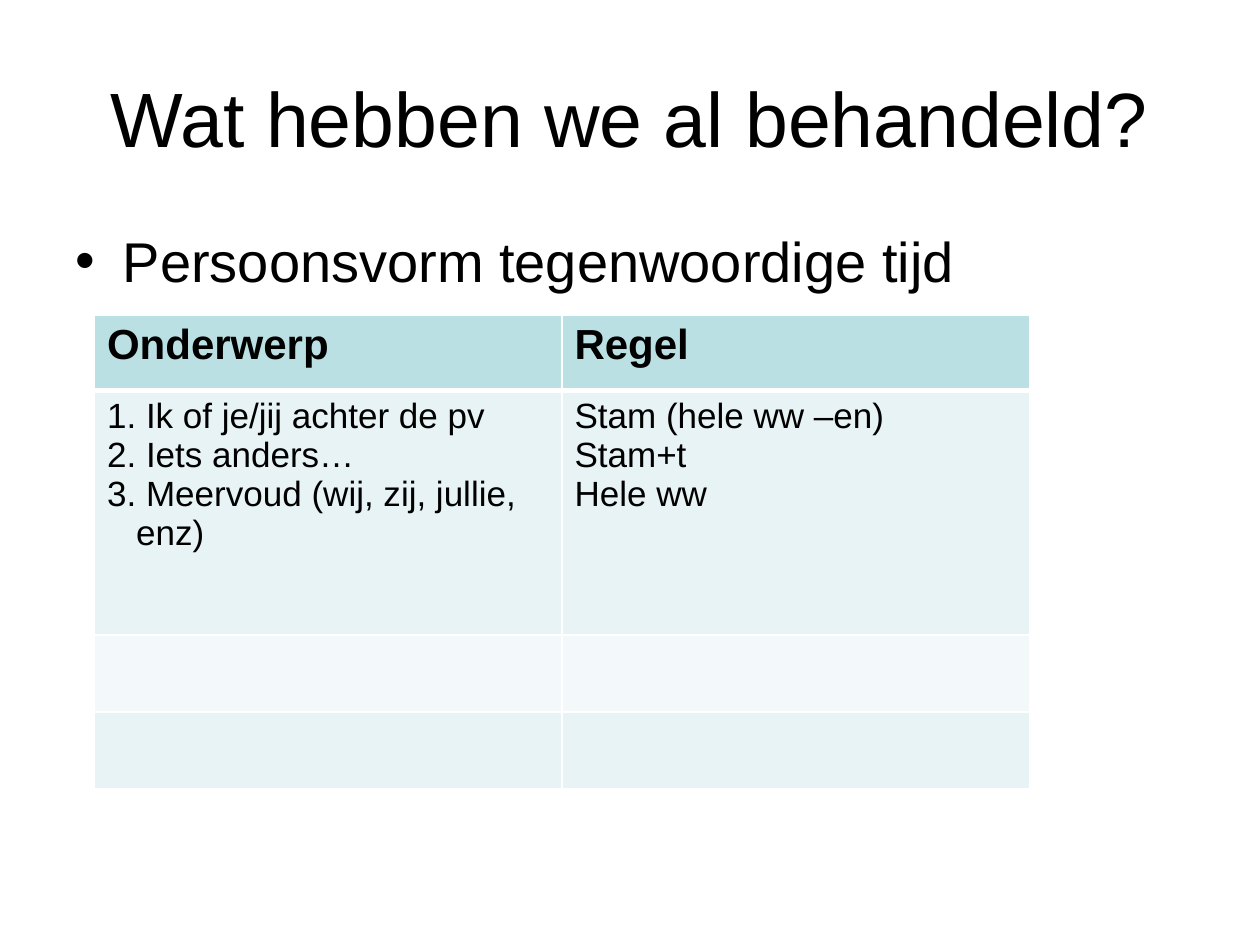
from dataclasses import dataclass

from lxml import etree
from pptx import Presentation
from pptx.dml.color import RGBColor
from pptx.enum.text import MSO_ANCHOR, MSO_AUTO_SIZE, PP_ALIGN
from pptx.oxml.ns import qn
from pptx.util import Inches, Pt

CENTER, LEFT = PP_ALIGN.CENTER, PP_ALIGN.LEFT
MIDDLE, TOP = MSO_ANCHOR.MIDDLE, MSO_ANCHOR.TOP
NO_AUTOFIT = MSO_AUTO_SIZE.NONE


@dataclass(frozen=True)
class Theme:
    font: str = "Arial"
    ink: str = "000000"
    border: str = "FFFFFF"
    header_fill: str = "BBE0E3"
    band_fills: tuple = ("E7F3F4", "F3F9FA")
    title_size: int = 44
    bullet_size: int = 32
    header_size: int = 24
    cell_size: int = 20
    thin: int = 1
    thick: int = 3


THEME = Theme()

RULES = [
    ("Onderwerp", "Regel"),
    (
        "1. Ik of je/jij achter de pv\n2. Iets anders…\n"
        "3. Meervoud (wij, zij, jullie, enz)",
        "Stam (hele ww –en)\nStam+t\nHele ww",
    ),
    ("", ""),
    ("", ""),
]
ROW_HEIGHTS = (0.6, 1.94, 0.61, 0.61)
HANGING_INDENT = Inches(0.23)


def style_paragraph(paragraph, size, align=LEFT, bold=False):
    paragraph.alignment = align
    font = paragraph.font
    font.name, font.size, font.bold = THEME.font, Pt(size), bold
    font.color.rgb = RGBColor.from_string(THEME.ink)


def fill_placeholder(placeholder, box, text, size, align, anchor):
    placeholder.left, placeholder.top, placeholder.width, placeholder.height = box
    frame = placeholder.text_frame
    frame.text = text
    frame.auto_size = NO_AUTOFIT
    frame.vertical_anchor = anchor
    style_paragraph(frame.paragraphs[0], size, align)


def set_borders(cell, top, bottom):
    properties = cell._tc.get_or_add_tcPr()
    sides = {"lnL": THEME.thin, "lnR": THEME.thin, "lnT": top, "lnB": bottom}
    for position, (side, width) in enumerate(sides.items()):
        line = etree.Element(qn(f"a:{side}"), w=str(Pt(width)))
        solid = etree.SubElement(line, qn("a:solidFill"))
        etree.SubElement(solid, qn("a:srgbClr"), val=THEME.border)
        properties.insert(position, line)


def fill_cell(cell, text, row):
    is_header = row == 0
    fill = THEME.header_fill if is_header else THEME.band_fills[(row - 1) % 2]
    cell.fill.solid()
    cell.fill.fore_color.rgb = RGBColor.from_string(fill)
    set_borders(
        cell,
        top=THEME.thick if row == 1 else THEME.thin,
        bottom=THEME.thick if is_header else THEME.thin,
    )
    cell.text = text
    size = THEME.header_size if is_header else THEME.cell_size
    for paragraph in cell.text_frame.paragraphs:
        style_paragraph(paragraph, size, bold=is_header)
        # Wrapped lines of numbered entries align after the number
        if paragraph.text[:1].isdigit():
            indents = paragraph._p.get_or_add_pPr()
            indents.set("marL", str(HANGING_INDENT))
            indents.set("indent", str(-HANGING_INDENT))


def add_rules_table(slide, box):
    rules = slide.shapes.add_table(len(RULES), len(RULES[0]), *box).table
    for column in rules.columns:
        column.width = box[2] // len(RULES[0])
    for row, (height, texts) in enumerate(zip(ROW_HEIGHTS, RULES)):
        rules.rows[row].height = Inches(height)
        for column, text in enumerate(texts):
            fill_cell(rules.cell(row, column), text, row)


def inches_box(*lengths):
    return tuple(Inches(length) for length in lengths)


def main():
    presentation = Presentation()
    presentation.slide_width, presentation.slide_height = Inches(10), Inches(7.5)
    slide = presentation.slides.add_slide(presentation.slide_layouts[1])

    # Title
    fill_placeholder(slide.shapes.title, inches_box(0.5, 0.3, 9, 1.25),
                     "Wat hebben we al behandeld?", THEME.title_size, CENTER, MIDDLE)
    # Topic bullet
    fill_placeholder(slide.placeholders[1], inches_box(0.5, 1.75, 9, 4.95),
                     "Persoonsvorm tegenwoordige tijd", THEME.bullet_size, LEFT, TOP)
    # Grammar rules
    add_rules_table(slide, inches_box(0.75, 2.5, 7.42, sum(ROW_HEIGHTS)))

    presentation.save("out.pptx")


if __name__ == "__main__":
    main()
